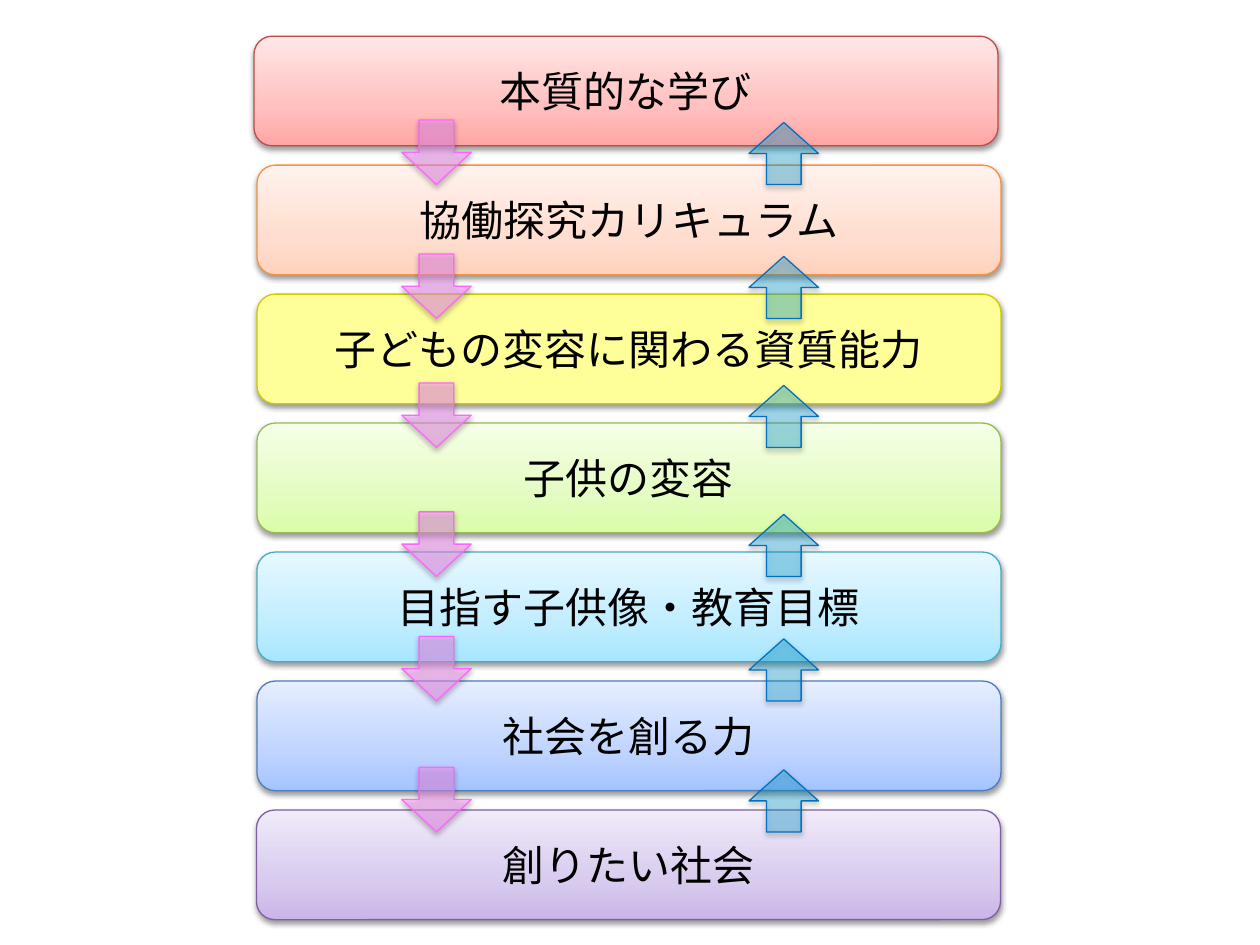
from dataclasses import dataclass

from lxml.etree import SubElement
from pptx import Presentation
from pptx.dml.color import RGBColor as Rgb
from pptx.enum.shapes import MSO_SHAPE as Shape
from pptx.enum.text import MSO_ANCHOR as Anchor, PP_ALIGN as Align
from pptx.oxml.ns import qn
from pptx.util import Cm, Pt


@dataclass(frozen=True)
class Theme:
    font: str = "Noto Sans CJK JP"
    text_size: float = 24
    line_width: float = 0.75
    text: str = "000000"
    shadow: str = "000000"
    shadow_opacity: int = 38
    gradient_stops: tuple = (0, 35, 100)
    red: tuple = ("BF4C48", "FFA6A5", "FFC0BF", "FFE7E7")
    orange: tuple = ("F69240", "FFD2BD", "FFDED0", "FFF2ED")
    yellow: tuple = ("CCCC00", "FFFF99")
    green: tuple = ("98B955", "DAFDA7", "E4FCC2", "F5FFE7")
    cyan: tuple = ("46AAC5", "A7E6FF", "C1EDFF", "E7F8FF")
    blue: tuple = ("4B7EBC", "A4C4FF", "BFD4FF", "E6EEFF")
    purple: tuple = ("7D60A0", "C9B5E8", "D8CBEE", "F0EAF9")
    down: tuple = ("FF66FF", "FF99FF", 50)
    up: tuple = ("0070C0", "00B0F0", 30)


def add_colour(parent, colour, opacity=100):
    element = SubElement(parent, qn("a:srgbClr"), val=colour)
    if opacity < 100:
        SubElement(element, qn("a:alpha"), val=str(opacity * 1000))


class LadderSlide:
    def __init__(self, slide, theme):
        self.slide = slide
        self.theme = theme

    def add_outlined(self, kind, left, top, width, height, line):
        shape = self.slide.shapes.add_shape(kind, Cm(left), Cm(top), Cm(width), Cm(height))
        shape.line.color.rgb = Rgb.from_string(line)
        shape.line.width = Pt(self.theme.line_width)
        return shape

    def add_shadow(self, shape):
        shape.shadow.inherit = False
        effects = shape._element.spPr.find(qn("a:effectLst"))
        shadow = SubElement(effects, qn("a:outerShdw"), blurRad=str(Pt(3.1)),
                            dist=str(Pt(1.6)), dir="5400000", rotWithShape="0")
        add_colour(shadow, self.theme.shadow, self.theme.shadow_opacity)

    def fill_gradient(self, shape, colours):
        shape.fill.gradient()
        shape.fill.gradient_angle = 90
        stops = shape._element.spPr.find(qn("a:gradFill")).find(qn("a:gsLst"))
        for stop in list(stops):
            stops.remove(stop)
        for position, colour in zip(self.theme.gradient_stops, colours):
            add_colour(SubElement(stops, qn("a:gs"), pos=str(position * 1000)), colour)

    def fill_solid(self, shape, colour, opacity=100):
        shape.fill.solid()
        shape.fill.fore_color.rgb = Rgb.from_string(colour)
        if opacity < 100:
            element = shape._element.spPr.find(qn("a:solidFill"))[0]
            SubElement(element, qn("a:alpha"), val=str(opacity * 1000))

    def add_step(self, text, left, top, width, height, colours):
        line, *fills = colours
        shape = self.add_outlined(Shape.ROUNDED_RECTANGLE, left, top, width, height, line)
        if len(fills) > 1:
            self.fill_gradient(shape, fills)
        else:
            self.fill_solid(shape, fills[0])
        self.add_shadow(shape)
        frame = shape.text_frame
        frame.word_wrap = True
        frame.vertical_anchor = Anchor.MIDDLE
        paragraph = frame.paragraphs[0]
        paragraph.text = text
        paragraph.alignment = Align.CENTER
        font = paragraph.font
        font.size = Pt(self.theme.text_size)
        font.name = self.theme.font
        font.color.rgb = Rgb.from_string(self.theme.text)
        properties = paragraph._p.pPr.find(qn("a:defRPr"))
        SubElement(properties, qn("a:ea"), typeface=self.theme.font)

    def add_arrow(self, left, top, width, height, colours, rotation=0):
        line, fill, opacity = colours
        shape = self.add_outlined(Shape.DOWN_ARROW, left, top, width, height, line)
        shape.rotation = rotation
        self.fill_solid(shape, fill, opacity)
        self.add_shadow(shape)


def main():
    presentation = Presentation()
    presentation.slide_width, presentation.slide_height = Cm(25.4), Cm(19.05)
    theme = Theme()
    ladder = LadderSlide(presentation.slides.add_slide(presentation.slide_layouts[6]), theme)

    steps = [
        ("本質的な学び", 5.12, theme.red),
        ("協働探究カリキュラム", 5.18, theme.orange),
        ("子どもの変容に関わる資質能力", 5.18, theme.yellow),
        ("子供の変容", 5.18, theme.green),
        ("目指す子供像・教育目標", 5.18, theme.cyan),
        ("社会を創る力", 5.18, theme.blue),
        ("創りたい社会", 5.17, theme.purple),
    ]
    first_top, pitch = 0.73, 2.6
    for index, (text, left, colours) in enumerate(steps):
        ladder.add_step(text, left, first_top + index * pitch, 15, 2.21, colours)

    for top in (2.42, 5.12, 7.72, 10.32, 12.83, 15.47):
        ladder.add_arrow(8.1, top, 1.4, 1.3, theme.down)
        ladder.add_arrow(15.1, top + 0.05, 1.4, 1.25, theme.up, rotation=180)

    presentation.save("out.pptx")


if __name__ == "__main__":
    main()
